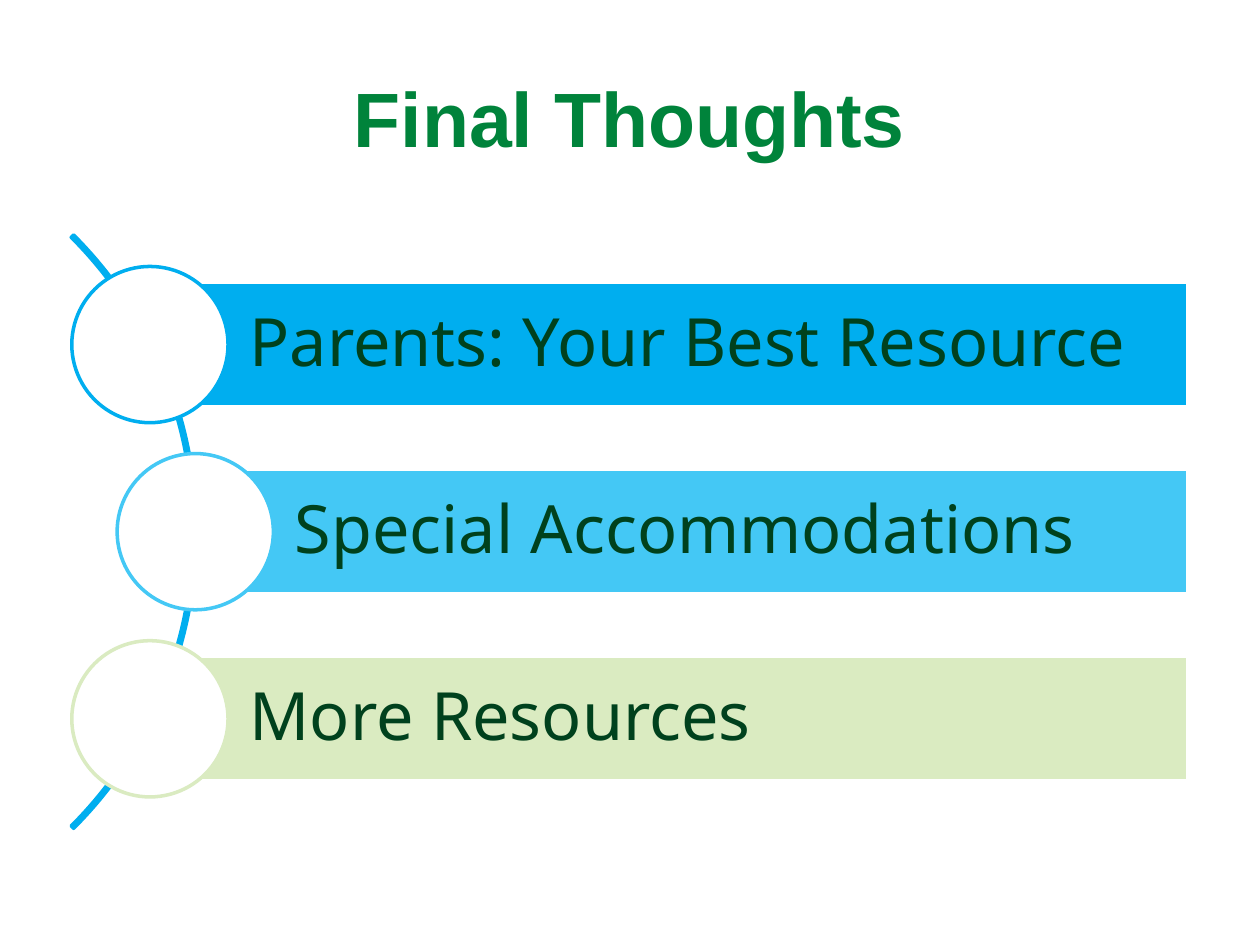
from pptx import Presentation
from pptx.dml.color import RGBColor
from pptx.enum.shapes import MSO_SHAPE
from pptx.enum.text import MSO_ANCHOR, MSO_AUTO_SIZE, PP_ALIGN
from pptx.util import Inches, Pt

COLORS = {
    "title": "00833B", "text": "00411D", "white": "FFFFFF",
    "blue": "00AEEF", "sky": "44C8F5", "lime": "DAEBC1",
}
TOPICS = [
    ("Parents: Your Best Resource", "blue", 1.19),
    ("Special Accommodations", "sky", 1.55),
    ("More Resources", "lime", 1.19),
]
MIDDLE, PITCH = 4.22, 1.485
BAR_HEIGHT, BAR_RIGHT = 0.99, 9.43
CIRCLE_SIZE = 1.24
ARC_CENTER, ARC_SIZE = -1.77, 6.66


def rgb(name):
    """Return the named colour."""
    return RGBColor.from_string(COLORS[name])


def add_run(paragraph, words, font, size, color, bold=False):
    """Add one formatted run to a paragraph."""
    run = paragraph.add_run()
    run.text = words
    run.font.name, run.font.size, run.font.bold = font, Pt(size), bold
    run.font.color.rgb = rgb(color)


def add_outlined(slide, kind, left, top, width, height, line, fill=None):
    """Add a preset shape with a 2 pt outline and an optional fill."""
    shape = slide.shapes.add_shape(
        kind, Inches(left), Inches(top), Inches(width), Inches(height))
    shape.shadow.inherit = False
    shape.line.color.rgb, shape.line.width = rgb(line), Pt(2)
    if fill:
        shape.fill.solid()
        shape.fill.fore_color.rgb = rgb(fill)
    else:
        shape.fill.background()
    return shape


def add_title(slide, words):
    """Place and format the title placeholder."""
    title = slide.shapes.title
    title.left, title.top = Inches(0.5), Inches(0.3)
    title.width, title.height = Inches(9), Inches(1.25)
    frame = title.text_frame
    frame.auto_size = MSO_AUTO_SIZE.NONE
    frame.vertical_anchor = MSO_ANCHOR.MIDDLE
    frame.paragraphs[0].alignment = PP_ALIGN.CENTER
    add_run(frame.paragraphs[0], words, "Arial", 44, "title", bold=True)


def add_arc(slide):
    """Draw the thin arc that the circles sit on."""
    arc = add_outlined(
        slide, MSO_SHAPE.BLOCK_ARC, ARC_CENTER - ARC_SIZE / 2,
        MIDDLE - ARC_SIZE / 2, ARC_SIZE, ARC_SIZE, "blue")
    for index, value in enumerate((189, 27, 0.004)):
        arc.adjustments[index] = value


def add_topic(slide, words, color, x, y):
    """Draw a labelled bar that starts at the centre of its circle."""
    bar = add_outlined(
        slide, MSO_SHAPE.RECTANGLE, x, y - BAR_HEIGHT / 2,
        BAR_RIGHT - x, BAR_HEIGHT, "white", color)
    frame = bar.text_frame
    frame.word_wrap = True
    frame.vertical_anchor = MSO_ANCHOR.MIDDLE
    frame.margin_left = Inches(0.79)
    frame.margin_top = frame.margin_right = frame.margin_bottom = Inches(0.11)
    label = frame.paragraphs[0]
    label.alignment, label.line_spacing = PP_ALIGN.LEFT, 0.9
    add_run(label, words, "Noto Sans", 38, "text")
    add_outlined(
        slide, MSO_SHAPE.OVAL, x - CIRCLE_SIZE / 2, y - CIRCLE_SIZE / 2,
        CIRCLE_SIZE, CIRCLE_SIZE, color, "white")


def main():
    """Build the slide and save it."""
    deck = Presentation()
    deck.slide_width, deck.slide_height = Inches(10), Inches(7.5)
    slide = deck.slides.add_slide(deck.slide_layouts[5])
    add_title(slide, "Final Thoughts")
    add_arc(slide)
    for row, (words, color, x) in enumerate(TOPICS):
        add_topic(slide, words, color, x, MIDDLE + (row - 1) * PITCH)
    deck.save("out.pptx")


if __name__ == "__main__":
    main()
